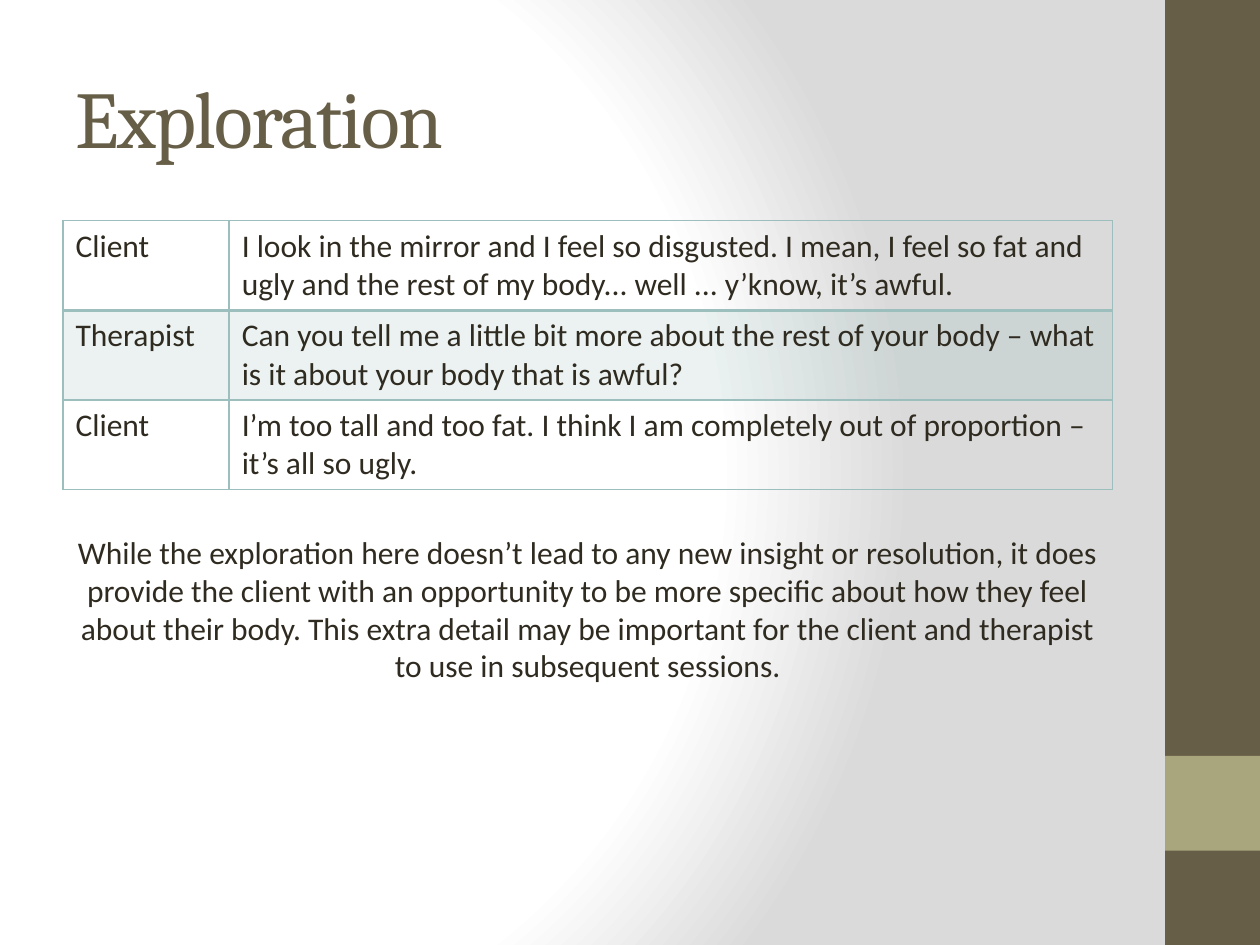
"""Build the Exploration slide: a short dialogue table and a closing comment."""
from dataclasses import dataclass

from lxml.etree import SubElement
from pptx import Presentation
from pptx.dml.color import RGBColor
from pptx.enum.shapes import MSO_SHAPE
from pptx.enum.text import MSO_ANCHOR, MSO_AUTO_SIZE, PP_ALIGN
from pptx.oxml import parse_xml
from pptx.oxml.ns import nsdecls, qn
from pptx.slide import Slide
from pptx.table import _Cell as Cell
from pptx.text.text import TextFrame
from pptx.util import Cm, Pt

COLORS = {
    "brown": "675E47",
    "olive": "A9A57C",
    "teal": "9CBEBD",
    "text": "2F2B20",
    "white": "FFFFFF",
    "grey": "DADADA",
}
TITLE_FORMAT = {"name": "Cambria", "size": Pt(46)}
BODY_FORMAT = {"name": "Calibri", "size": Pt(18)}
LEFT, WIDTH = Cm(1.27), Cm(21.16)
COLUMN_WIDTHS = (Cm(3.35), Cm(17.81))
ROW_HEIGHT = Cm(1.8)
COMMENT = (
    "While the exploration here doesn’t lead to any new insight or resolution, "
    "it does provide the client with an opportunity to be more specific about how "
    "they feel about their body. This extra detail may be important for the client "
    "and therapist to use in subsequent sessions."
)


@dataclass
class Band:
    top: float
    height: float
    color: str


@dataclass
class Turn:
    speaker: str
    words: str
    shaded: bool = False
    rule_below: int = 1


BANDS = (Band(0, 19.05, "brown"), Band(15.24, 1.91, "olive"))
TURNS = (
    Turn("Client", "I look in the mirror and I feel so disgusted. I mean, I feel so fat "
         "and ugly and the rest of my body... well ... y’know, it’s awful.", rule_below=2),
    Turn("Therapist", "Can you tell me a little bit more about the rest of your body – "
         "what is it about your body that is awful?", shaded=True),
    Turn("Client", "I’m too tall and too fat. I think I am completely out of proportion – "
         "it’s all so ugly."),
)


def rgb(name: str) -> RGBColor:
    return RGBColor.from_string(COLORS[name])


def write(frame: TextFrame, text: str, formats: dict, color: str, align: PP_ALIGN) -> None:
    frame.text = text
    paragraph = frame.paragraphs[0]
    paragraph.alignment = align
    font = paragraph.runs[0].font
    for attribute, value in formats.items():
        setattr(font, attribute, value)
    font.color.rgb = rgb(color)


def paint_background(slide: Slide) -> None:
    fill = slide.background.fill
    fill.solid()
    stops = "".join(
        f'<a:gs pos="{position}"><a:srgbClr val="{COLORS[name]}"/></a:gs>'
        for position, name in ((0, "white"), (75000, "white"), (100000, "grey"))
    )
    gradient = parse_xml(
        f'<a:gradFill {nsdecls("a")} rotWithShape="1"><a:gsLst>{stops}</a:gsLst>'
        '<a:path path="circle"><a:fillToRect l="20000" t="50000" r="100000" b="50000"/>'
        "</a:path></a:gradFill>"
    )
    solid = next(slide.element.iter(qn("a:solidFill")))
    solid.getparent().replace(solid, gradient)


def draw_band(slide: Slide, band: Band) -> None:
    shape = slide.shapes.add_shape(
        MSO_SHAPE.RECTANGLE, Cm(23.49), Cm(band.top), Cm(1.91), Cm(band.height))
    shape.shadow.inherit = False
    shape.fill.solid()
    shape.fill.fore_color.rgb = rgb(band.color)
    shape.line.fill.background()


def set_borders(cell: Cell, top: int, bottom: int) -> None:
    properties = cell._tc.get_or_add_tcPr()
    for side, width in {"L": 1, "R": 1, "T": top, "B": bottom}.items():
        line = SubElement(properties, qn(f"a:ln{side}"), w=str(Pt(width)))
        solid = SubElement(line, qn("a:solidFill"))
        SubElement(solid, qn("a:srgbClr"), val=COLORS["teal"])


def fill_cell(cell: Cell, shaded: bool) -> None:
    if not shaded:
        cell.fill.background()
        return
    cell.fill.solid()
    cell.fill.fore_color.rgb = rgb("teal")
    color = cell._tc.tcPr.find(qn("a:solidFill")).find(qn("a:srgbClr"))
    SubElement(color, qn("a:alpha"), val="20000")


def draw_dialogue(slide: Slide) -> None:
    table = slide.shapes.add_table(
        len(TURNS), len(COLUMN_WIDTHS), LEFT, Cm(4.45), WIDTH, ROW_HEIGHT * len(TURNS)).table
    table.first_row = table.horz_banding = False
    for column, width in zip(table.columns, COLUMN_WIDTHS):
        column.width = width
    rule_above = 1
    for row, turn in zip(table.rows, TURNS):
        row.height = ROW_HEIGHT
        for cell, text in zip(row.cells, (turn.speaker, turn.words)):
            write(cell.text_frame, text, BODY_FORMAT, "text", PP_ALIGN.LEFT)
            set_borders(cell, rule_above, turn.rule_below)
            fill_cell(cell, turn.shaded)
        rule_above = turn.rule_below


def draw_title(slide: Slide) -> None:
    title = slide.shapes.title
    place = {"left": LEFT, "top": Cm(0.76), "width": WIDTH, "height": Cm(3.18)}
    for attribute, value in place.items():
        setattr(title, attribute, value)
    frame = title.text_frame
    frame.auto_size = MSO_AUTO_SIZE.NONE
    frame.vertical_anchor = MSO_ANCHOR.MIDDLE
    write(frame, "Exploration", TITLE_FORMAT, "brown", PP_ALIGN.LEFT)
    frame.paragraphs[0].runs[0].font._element.set("spc", "-100")


def draw_comment(slide: Slide) -> None:
    frame = slide.shapes.add_textbox(LEFT, Cm(10.62), WIDTH, Cm(3.33)).text_frame
    frame.word_wrap = True
    frame.auto_size = MSO_AUTO_SIZE.SHAPE_TO_FIT_TEXT
    write(frame, COMMENT, BODY_FORMAT, "text", PP_ALIGN.CENTER)


def main() -> None:
    presentation = Presentation()
    presentation.slide_width, presentation.slide_height = Cm(25.4), Cm(19.05)
    slide = presentation.slides.add_slide(presentation.slide_layouts[5])
    paint_background(slide)
    for band in BANDS:
        draw_band(slide, band)
    draw_title(slide)
    draw_dialogue(slide)
    draw_comment(slide)
    presentation.save("out.pptx")


if __name__ == "__main__":
    main()
